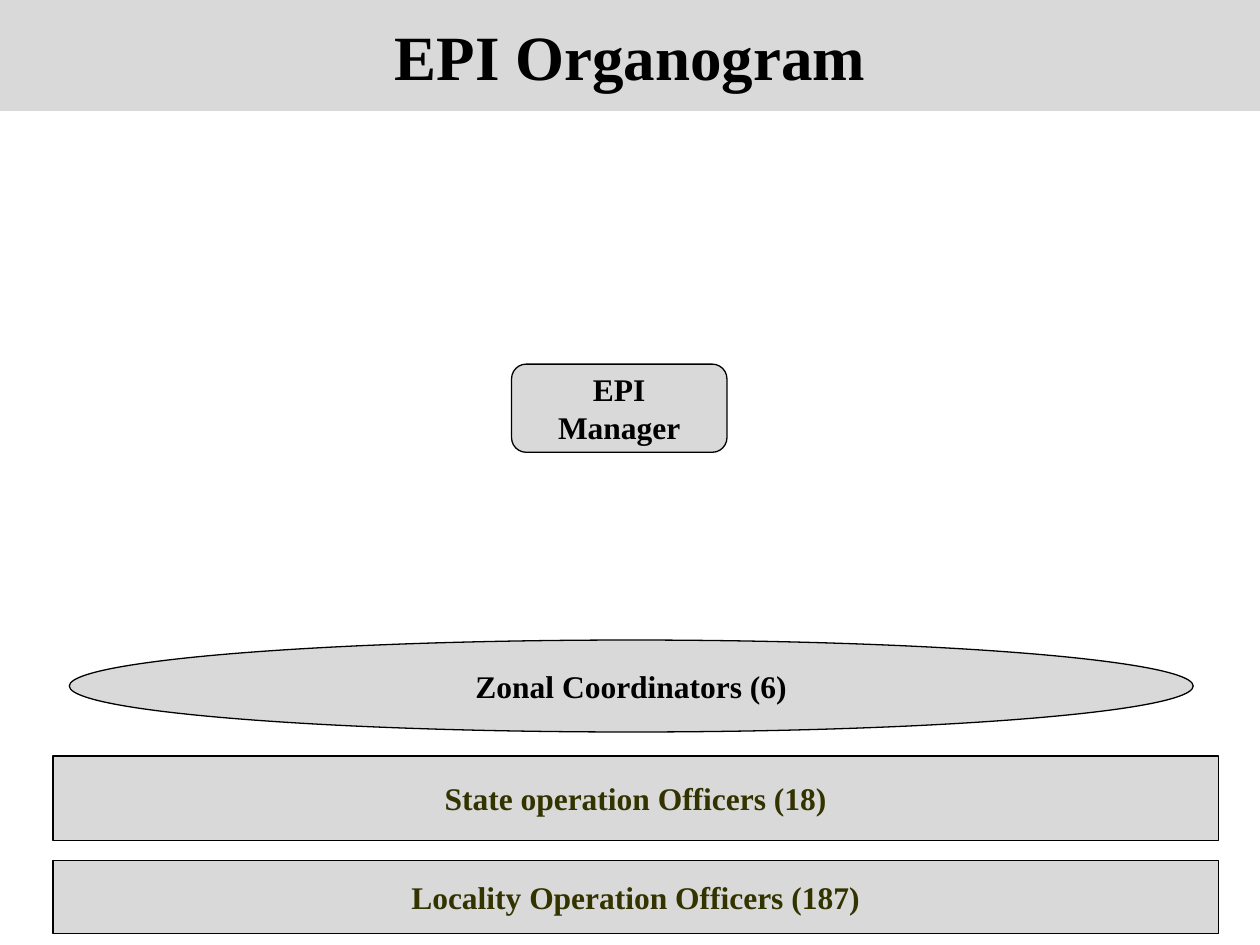
from pptx import Presentation, util as u
from pptx.dml.color import RGBColor
from pptx.enum import shapes, text

GREY = RGBColor(0xD9, 0xD9, 0xD9)
BLACK = RGBColor(0, 0, 0)
OLIVE = RGBColor(0x33, 0x33, 0x00)
FONT = "Times New Roman"
WIDTH, HEIGHT = u.Inches(10), u.Inches(7.5)
COLUMN, ROW = WIDTH / 100, HEIGHT / 75


def add_panel(slide, kind, box, wording, color=BLACK, size=18, border=BLACK, weight=0.75):
    left, top, width, height = box
    panel = slide.shapes.add_shape(
        kind, int(left * COLUMN), int(top * ROW), int(width * COLUMN), int(height * ROW))
    panel.shadow.inherit = False
    panel.fill.solid()
    panel.fill.fore_color.rgb = GREY
    panel.line.color.rgb = border
    panel.line.width = u.Pt(weight)
    frame = panel.text_frame
    frame.text = wording
    frame.word_wrap = True
    frame.vertical_anchor = text.MSO_ANCHOR.MIDDLE
    paragraph = frame.paragraphs[0]
    paragraph.alignment = text.PP_ALIGN.CENTER
    font = paragraph.runs[0].font
    font.name, font.size, font.bold = FONT, u.Pt(size), True
    font.color.rgb = color
    return panel


def add_title_band(slide, box):
    add_panel(slide, shapes.MSO_SHAPE.RECTANGLE, box, "EPI Organogram",
              size=36, border=GREY, weight=4.5)


def add_manager(slide, box):
    manager = add_panel(slide, shapes.MSO_SHAPE.ROUNDED_RECTANGLE, box, "EPI Manager")
    manager.text_frame.margin_left = manager.text_frame.margin_right = u.Inches(0.15)


def add_coordinators(slide, box):
    add_panel(slide, shapes.MSO_SHAPE.OVAL, box, "Zonal Coordinators (6)")


def add_officers(slide, box, wording):
    add_panel(slide, shapes.MSO_SHAPE.RECTANGLE, box, wording, color=OLIVE)


def main():
    deck = Presentation()
    deck.slide_width, deck.slide_height = WIDTH, HEIGHT
    slide = deck.slides.add_slide(deck.slide_layouts[6])
    add_title_band(slide, (0, 0.3, 100, 8.2))
    add_manager(slide, (40.6, 28.9, 17.1, 7))
    add_coordinators(slide, (5.5, 50.8, 89.2, 7.3))
    add_officers(slide, (4.2, 68.3, 92.5, 5.8), "Locality Operation Officers (187)")
    add_officers(slide, (4.2, 60, 92.5, 6.7), "State operation Officers (18)")
    deck.save("out.pptx")


if __name__ == "__main__":
    main()
